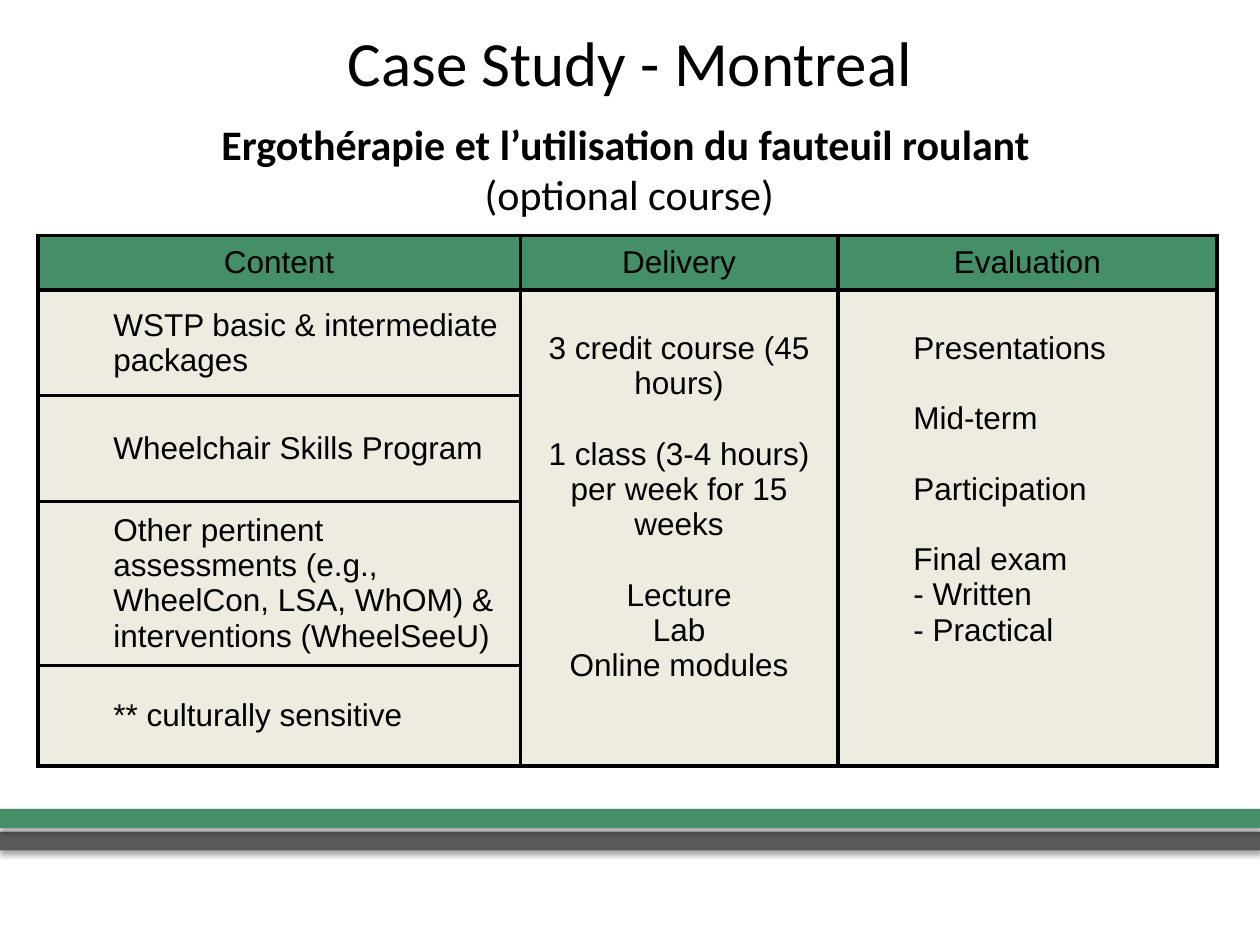
from lxml import etree
from pptx import Presentation
from pptx.dml.color import RGBColor
from pptx.enum import shapes, text
from pptx.oxml import ns
from pptx.util import Inches, Pt

BLACK = RGBColor(0x00, 0x00, 0x00)
GREEN = RGBColor(0x44, 0x8E, 0x68)
GREY = RGBColor(0x59, 0x59, 0x59)
CREAM = RGBColor(0xEE, 0xEC, 0xE1)

CENTER, LEFT = text.PP_ALIGN.CENTER, text.PP_ALIGN.LEFT
MIDDLE, TOP = text.MSO_ANCHOR.MIDDLE, text.MSO_ANCHOR.TOP

TITLE_FONT = {"name": "Calibri", "size": Pt(36)}
COURSE_FONT = {"name": "Calibri", "size": Pt(24), "bold": True}
NOTE_FONT = {"name": "Calibri", "size": Pt(24)}
CELL_FONT = {"name": "Arial", "size": Pt(18)}
LINE = Pt(20)  # one line of table text

COLUMN_WIDTHS = (3.83, 2.52, 3.01)
ROW_HEIGHTS = (0.43, 0.84, 0.84, 0.91, 0.8)
HEADINGS = ("Content", "Delivery", "Evaluation")
CONTENT = (
    "WSTP basic & intermediate packages",
    "Wheelchair Skills Program",
    "Other pertinent assessments (e.g., WheelCon, LSA, WhOM) & "
    "interventions (WheelSeeU)",
    "** culturally sensitive",
)
# Each inner tuple is a group of lines, set apart by one line of space
DELIVERY = (
    ("3 credit course (45 hours)",),
    ("1 class (3-4 hours) per week for 15 weeks",),
    ("Lecture", "Lab", "Online modules"),
)
EVALUATION = (
    ("Presentations",),
    ("Mid-term",),
    ("Participation",),
    ("Final exam", "- Written", "- Practical"),
)


def add_xml(parent, tag, **attributes):
    return etree.SubElement(parent, ns.qn(tag), attributes)


def write(paragraph, words, font, align):
    paragraph.text = words
    paragraph.alignment = align
    for key, value in font.items():
        setattr(paragraph.font, key, value)
    paragraph.font.color.rgb = BLACK


def add_bar(slide, left, top, width, height, color):
    bar = slide.shapes.add_shape(
        shapes.MSO_SHAPE.RECTANGLE, left, top, width, height)
    bar.shadow.inherit = False
    bar.fill.solid()
    bar.fill.fore_color.rgb = color
    bar.line.fill.background()
    effects = bar.element.spPr.find(ns.qn("a:effectLst"))
    shadow = add_xml(effects, "a:outerShdw", blurRad="40000", dist="23000",
                     dir="5400000", rotWithShape="0")
    shadow_color = add_xml(shadow, "a:srgbClr", val=str(BLACK))
    add_xml(shadow_color, "a:alpha", val="35000")


def add_text(slide, left, top, width, height, lines, anchor):
    """Place (words, font, alignment) lines in one text box."""
    frame = slide.shapes.add_textbox(left, top, width, height).text_frame
    frame.word_wrap = True
    frame.vertical_anchor = anchor
    for index, line in enumerate(lines):
        paragraph = frame.add_paragraph() if index else frame.paragraphs[0]
        write(paragraph, *line)


def style_cell(cell, color):
    properties = cell._tc.get_or_add_tcPr()
    for side in ("a:lnL", "a:lnR", "a:lnT", "a:lnB"):
        border = add_xml(properties, side, w=str(Pt(2.25)))
        add_xml(add_xml(border, "a:solidFill"), "a:srgbClr", val=str(BLACK))
    cell.fill.solid()
    cell.fill.fore_color.rgb = color
    cell.vertical_anchor = MIDDLE


def fill_cell(cell, groups, align, indent=0):
    first = True
    for group in groups:
        for position, words in enumerate(group):
            frame = cell.text_frame
            paragraph = frame.paragraphs[0] if first else frame.add_paragraph()
            write(paragraph, words, CELL_FONT, align)
            if indent:
                paragraph._p.get_or_add_pPr().set("marL", str(indent))
            if position == 0 and not first:
                paragraph.space_before = LINE
            first = False


def add_course_table(slide, left, top, width, height):
    table = slide.shapes.add_table(
        len(ROW_HEIGHTS), len(COLUMN_WIDTHS), left, top, width, height).table
    for column, size in zip(table.columns, COLUMN_WIDTHS):
        column.width = Inches(size)
    for row, size in zip(table.rows, ROW_HEIGHTS):
        row.height = Inches(size)
    for index, row in enumerate(table.rows):
        for cell in row.cells:
            style_cell(cell, CREAM if index else GREEN)

    for column, heading in enumerate(HEADINGS):
        fill_cell(table.cell(0, column), [[heading]], CENTER)
    for row, topic in enumerate(CONTENT, start=1):
        fill_cell(table.cell(row, 0), [[topic]], LEFT, Inches(0.5))

    last_row = len(ROW_HEIGHTS) - 1
    for column, groups, align, indent in (
            (1, DELIVERY, CENTER, 0), (2, EVALUATION, LEFT, Inches(0.5))):
        cell = table.cell(1, column)
        cell.merge(table.cell(last_row, column))
        cell.vertical_anchor = TOP
        cell.margin_top = Inches(0.05) + LINE
        fill_cell(cell, groups, align, indent)


def main():
    deck = Presentation()
    deck.slide_width, deck.slide_height = Inches(10), Inches(7.5)
    slide = deck.slides.add_slide(deck.slide_layouts[6])

    for top, color in ((6.6, GREY), (6.42, GREEN)):
        add_bar(slide, 0, Inches(top), deck.slide_width, Inches(0.15), color)
    add_text(slide, 0, 0, deck.slide_width, Inches(0.98),
             [("Case Study - Montreal", TITLE_FONT, CENTER)], MIDDLE)
    add_course_table(slide, Inches(0.3), Inches(1.87),
                     Inches(9.35), Inches(4.22))
    add_text(slide, Inches(1.66), Inches(0.89), Inches(6.67), Inches(0.91),
             [("Ergothérapie et l’utilisation du fauteuil roulant",
               COURSE_FONT, LEFT),
              ("(optional course)", NOTE_FONT, CENTER)], TOP)
    deck.save("out.pptx")


if __name__ == "__main__":
    main()
